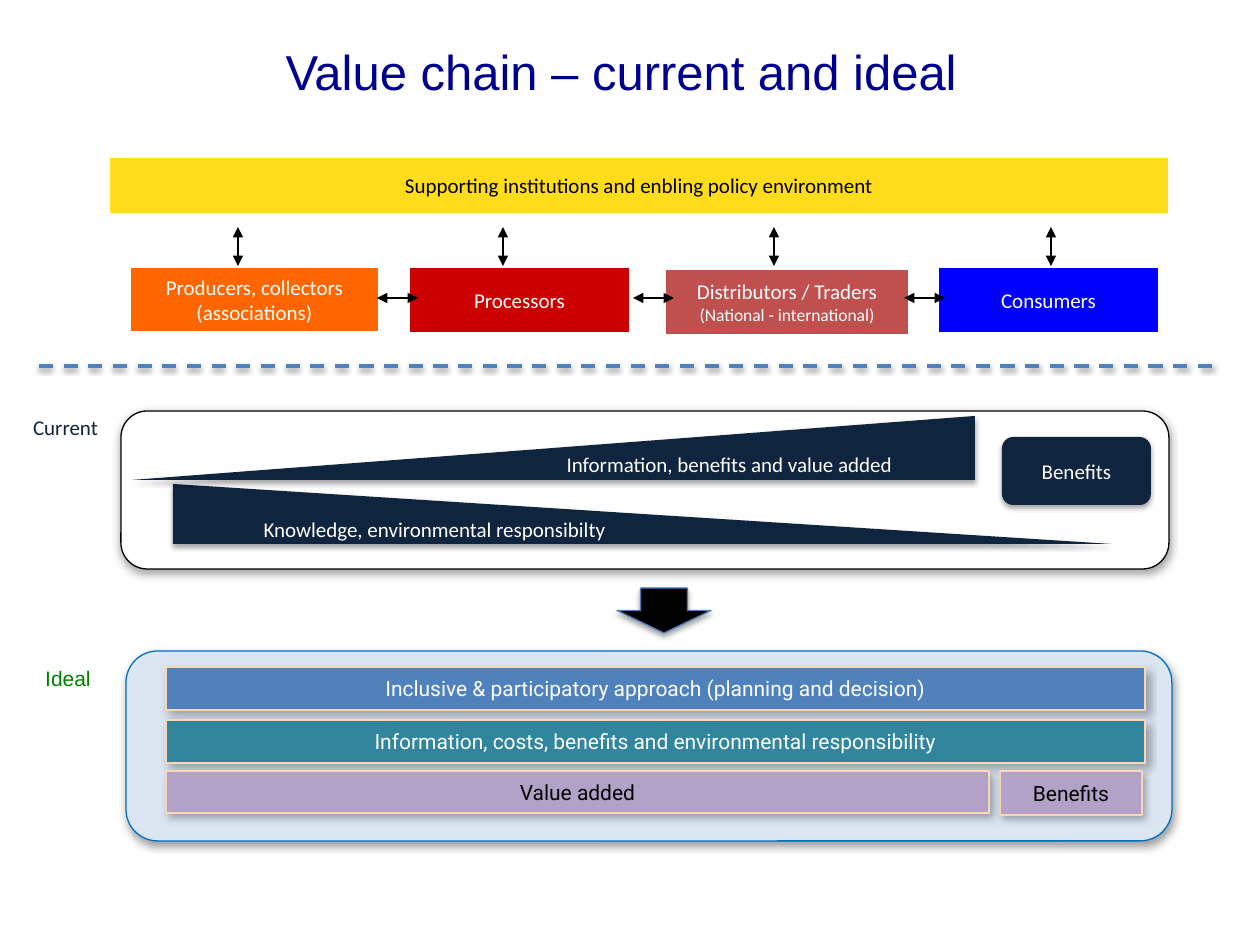
import lxml.etree
import pptx
import pptx.dml.color
import pptx.enum.dml
import pptx.enum.shapes
import pptx.enum.text
import pptx.oxml.ns
import pptx.util

PX = 914400 / 126
SHAPE = pptx.enum.shapes.MSO_SHAPE
ALIGN = pptx.enum.text.PP_ALIGN
MIDDLE = pptx.enum.text.MSO_ANCHOR.MIDDLE
qn = pptx.oxml.ns.qn
Pt = pptx.util.Pt
COLORS = {
    "title": "000090", "white": "FFFFFF", "black": "000000", "navy": "0F243E",
    "yellow": "FFDC1C", "orange": "FF6600", "red": "CC0000", "brick": "C0504D",
    "pure blue": "0000FF", "blue": "4F81BD", "arrow edge": "4B7EBC",
    "pale blue": "DCE6F2", "frame blue": "0070C0", "teal": "31859C",
    "lilac": "B3A2C7", "peach": "FCD5B5", "green": "008000",
}
RGB = {name: pptx.dml.color.RGBColor.from_string(code) for name, code in COLORS.items()}
# Shadows: opacity %, blur pt, distance pt, direction in degrees
FRAME_SHADOW = (38, 5, 1.6, 90)
SOFT_SHADOW = (35, 3.1, 1.8, 90)
BAR_SHADOW = (30, 4.5, 2.6, 53)
DIVIDER_SHADOW = (38, 3.1, 1.6, 90)


def cast_shadow(properties, shadow):
    """Give the shape properties exactly this shadow, or none."""
    effects = properties.find(qn("a:effectLst"))
    if effects is None:
        effects = lxml.etree.SubElement(properties, qn("a:effectLst"))
    if shadow:
        opacity, blur, distance, angle = shadow
        outer = lxml.etree.SubElement(
            effects, qn("a:outerShdw"), blurRad=str(Pt(blur)), dist=str(Pt(distance)),
            dir=str(angle * 60000), rotWithShape="0")
        color = lxml.etree.SubElement(outer, qn("a:srgbClr"), val=COLORS["black"])
        lxml.etree.SubElement(color, qn("a:alpha"), val=str(opacity * 1000))


def add_box(kind, place, fill, edge=None, edge_width=0.75, shadow=None, text="",
            color="white", font="Calibri", align=ALIGN.CENTER):
    box = slide.shapes.add_shape(kind, *[round(v * PX) for v in place])
    box.shadow.inherit = False
    box.fill.solid()
    box.fill.fore_color.rgb = RGB[fill]
    if edge:
        box.line.color.rgb = RGB[edge]
        box.line.width = Pt(edge_width)
    else:
        box.line.fill.background()
    cast_shadow(box._element.spPr, shadow)
    frame = box.text_frame
    frame.word_wrap = True
    frame.vertical_anchor = MIDDLE
    frame.text = text
    for paragraph in frame.paragraphs:
        paragraph.alignment = align
        paragraph.font.size = Pt(12)
        paragraph.font.name = font
        paragraph.font.color.rgb = RGB[color]
    return box


deck = pptx.Presentation()
deck.slide_width = pptx.util.Inches(10)
deck.slide_height = pptx.util.Inches(7.5)
slide = deck.slides.add_slide(deck.slide_layouts[5])

title = slide.shapes.title
title.left, title.top, title.width, title.height = [round(v * PX) for v in (54, 34, 1134, 88)]
title.text_frame.text = "Value chain – current and ideal"
title.text_frame.vertical_anchor = MIDDLE
heading = title.text_frame.paragraphs[0]
heading.alignment = ALIGN.CENTER
heading.line_spacing = 0.7
heading.font.size = Pt(28)
heading.font.name = "Arial"
heading.font.color.rgb = RGB["title"]

# Chain of actors under the supporting institutions
chain = []
for place, fill, color, text in [
    ((129, 266, 251, 67), "orange", "white", "Producers, collectors (associations)"),
    ((408, 266, 223, 68), "red", "white", "Processors"),
    ((664, 268, 246, 68), "brick", "white", "Distributors / Traders\n(National - international)"),
    ((937, 266, 223, 68), "pure blue", "white", "Consumers"),
    ((108, 156, 1062, 59), "yellow", "black",
     "Supporting institutions and enbling policy environment"),
]:
    actor = add_box(SHAPE.RECTANGLE, place, fill, "white", 2.25, text=text, color=color)
    frame = actor.text_frame
    frame.margin_left = frame.margin_right = round(9 * PX)
    frame.margin_top = frame.margin_bottom = round(5 * PX)
    chain.append(actor)
chain[2].text_frame.paragraphs[1].font.size = Pt(10)

# Two-way arrows between actors and up to the institutions, then the divider
arrows = [(x, 298, x + 41, 298, 1) for x in (377, 633, 904)]
arrows += [(x, 227, x, 266, 0.75) for x in (238, 503, 774, 1051)]
divider = (39, 366, 1213, 366, 2)
for link in arrows + [divider]:
    *ends, width = link
    line = slide.shapes.add_connector(
        pptx.enum.shapes.MSO_CONNECTOR.STRAIGHT, *[round(v * PX) for v in ends])
    line.line.width = Pt(width)
    if link is divider:
        line.line.color.rgb = RGB["blue"]
        line.line.dash_style = pptx.enum.dml.MSO_LINE.DASH
        cast_shadow(line._element.spPr, DIVIDER_SHADOW)
    else:
        line.line.color.rgb = RGB["black"]
        for end in ("a:headEnd", "a:tailEnd"):
            lxml.etree.SubElement(line.line._ln, qn(end), type="triangle")
        cast_shadow(line._element.spPr, None)

# Current situation
add_box(SHAPE.ROUNDED_RECTANGLE, (121, 411, 1048, 158), "white", "black", shadow=FRAME_SHADOW)
add_box(SHAPE.RIGHT_TRIANGLE, (173, 484, 939, 60), "navy", shadow=SOFT_SHADOW,
        text="Knowledge, environmental responsibilty", align=ALIGN.LEFT)
information = add_box(SHAPE.RIGHT_TRIANGLE, (132, 416, 843, 64), "navy", shadow=SOFT_SHADOW,
                      text="Information, benefits and value added", align=ALIGN.RIGHT)
information._element.spPr.find(qn("a:xfrm")).set("flipH", "1")
add_box(SHAPE.ROUNDED_RECTANGLE, (1002, 437, 149, 68), "navy", shadow=SOFT_SHADOW,
        text="Benefits")

add_box(SHAPE.DOWN_ARROW, (617, 588, 94, 45), "black", "arrow edge", shadow=SOFT_SHADOW)

# Ideal situation
add_box(SHAPE.ROUNDED_RECTANGLE, (126, 651, 1046, 190), "pale blue", "frame blue",
        shadow=FRAME_SHADOW)
for place, fill, color, text in [
    ((166, 667, 979, 43), "blue", "white",
     "Inclusive & participatory approach (planning and decision)"),
    ((166, 720, 979, 43), "teal", "white",
     "Information, costs, benefits and environmental responsibility"),
    ((1000, 771, 142, 44), "lilac", "black", "Benefits"),
    ((166, 771, 823, 42), "lilac", "black", "Value added"),
]:
    add_box(SHAPE.RECTANGLE, place, fill, "peach", shadow=BAR_SHADOW, text=text,
            color=color, font="Roboto")

for text, place, font, color in [
    ("Current", (5, 408, 121, 38), "Calibri", "navy"),
    ("Ideal", (1, 659, 134, 38), "Arial", "green"),
]:
    label = slide.shapes.add_textbox(*[round(v * PX) for v in place])
    label.text_frame.word_wrap = True
    label.text_frame.text = text
    caption = label.text_frame.paragraphs[0]
    caption.alignment = ALIGN.CENTER
    caption.font.size = Pt(12)
    caption.font.name = font
    caption.font.color.rgb = RGB[color]

deck.save("out.pptx")
